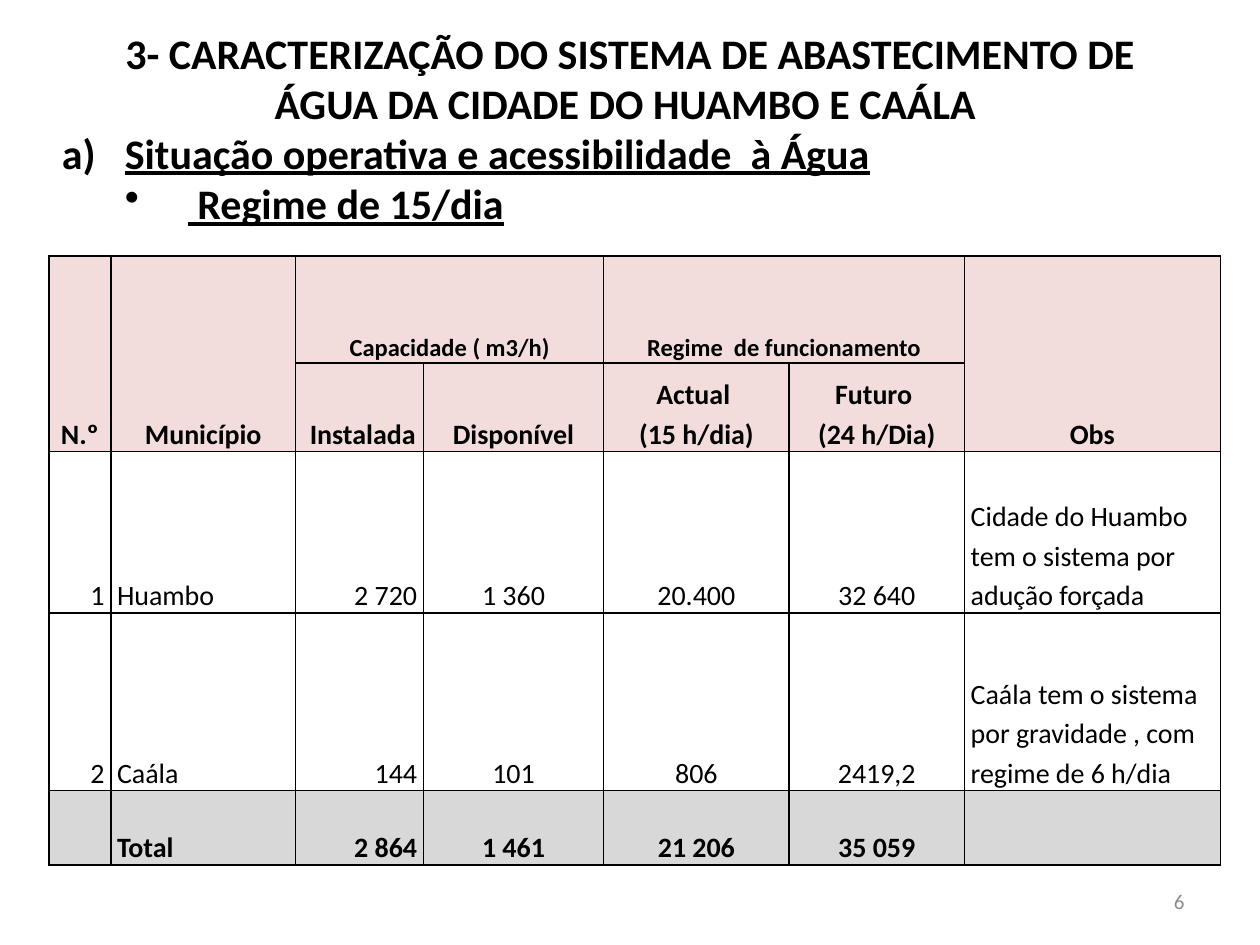
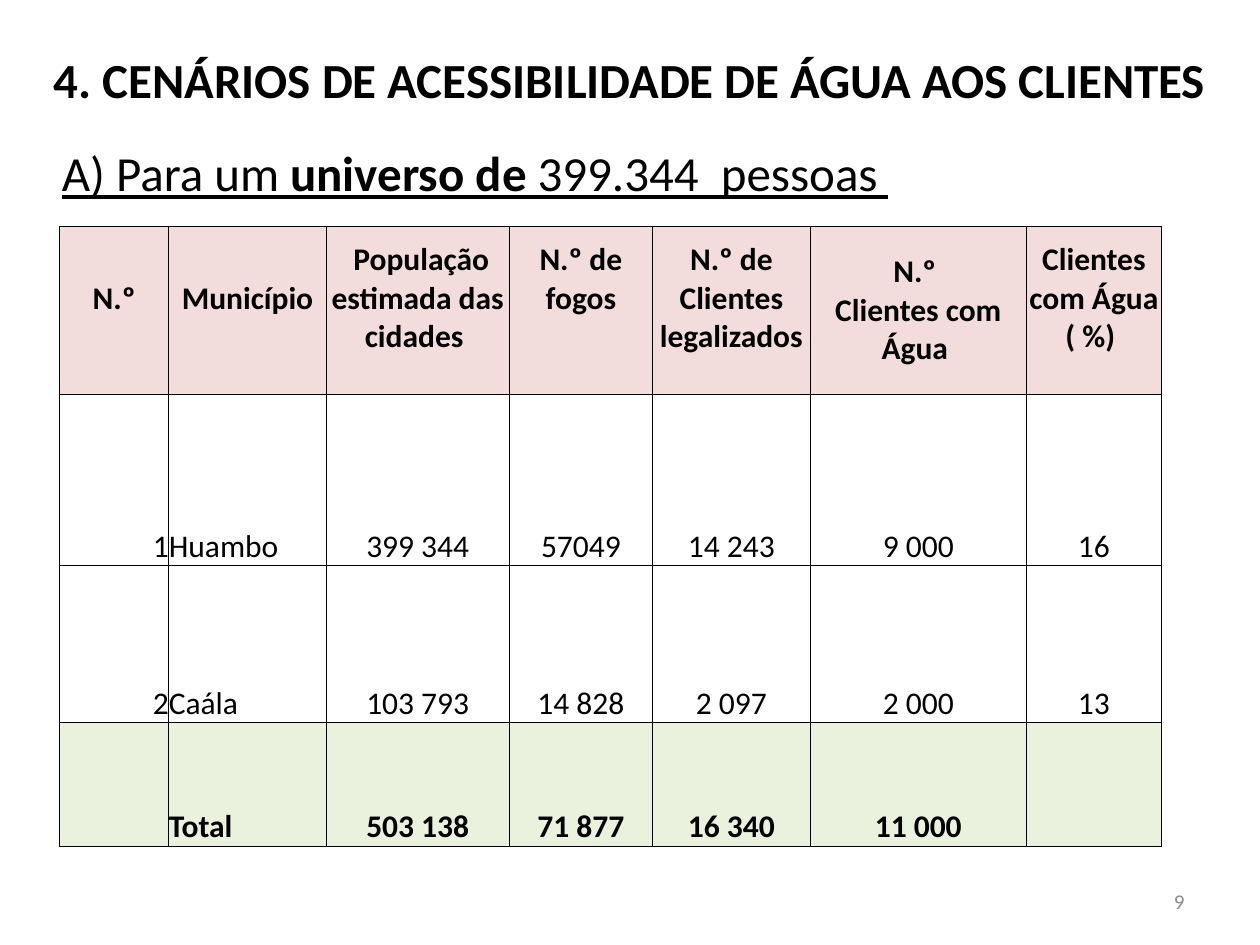
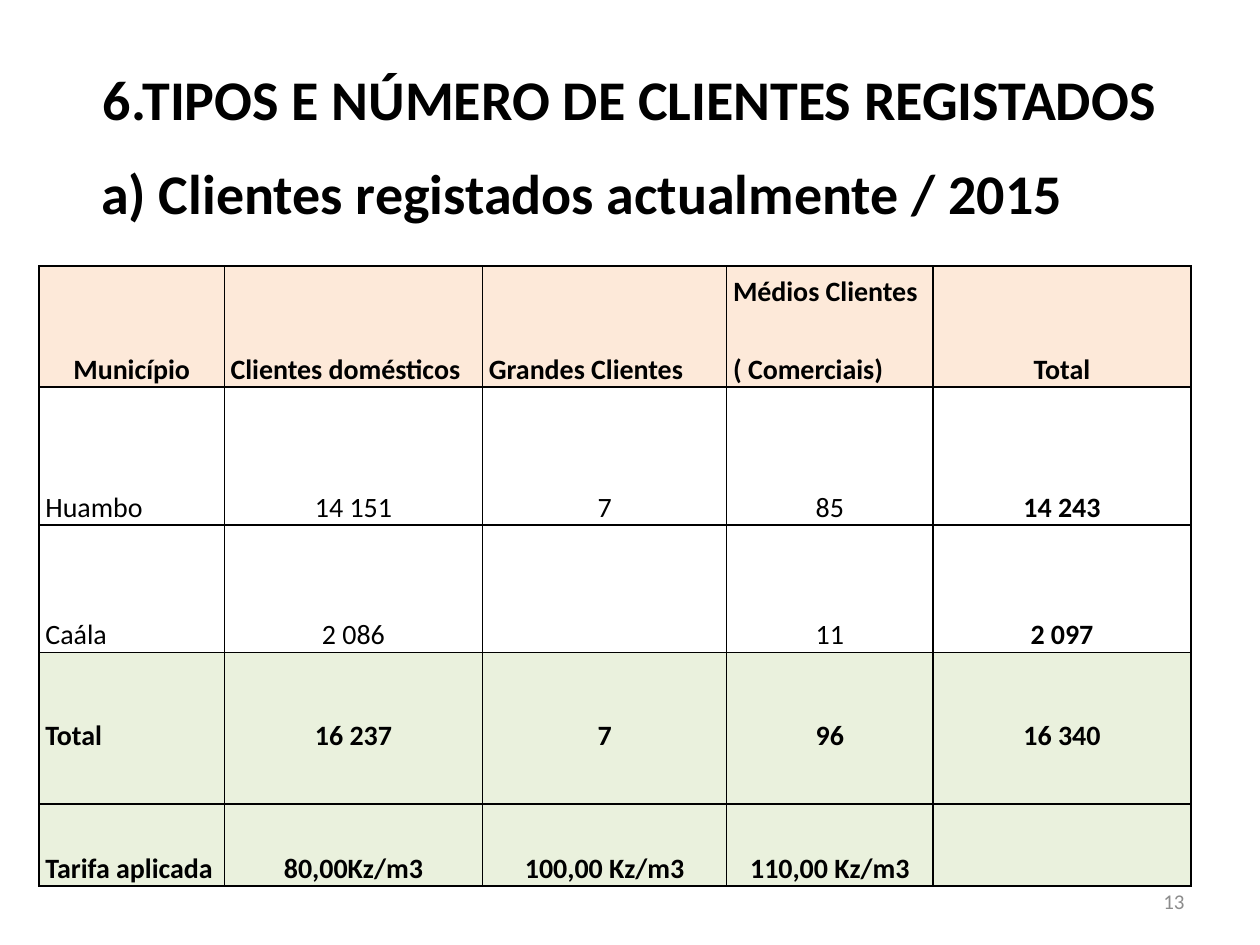
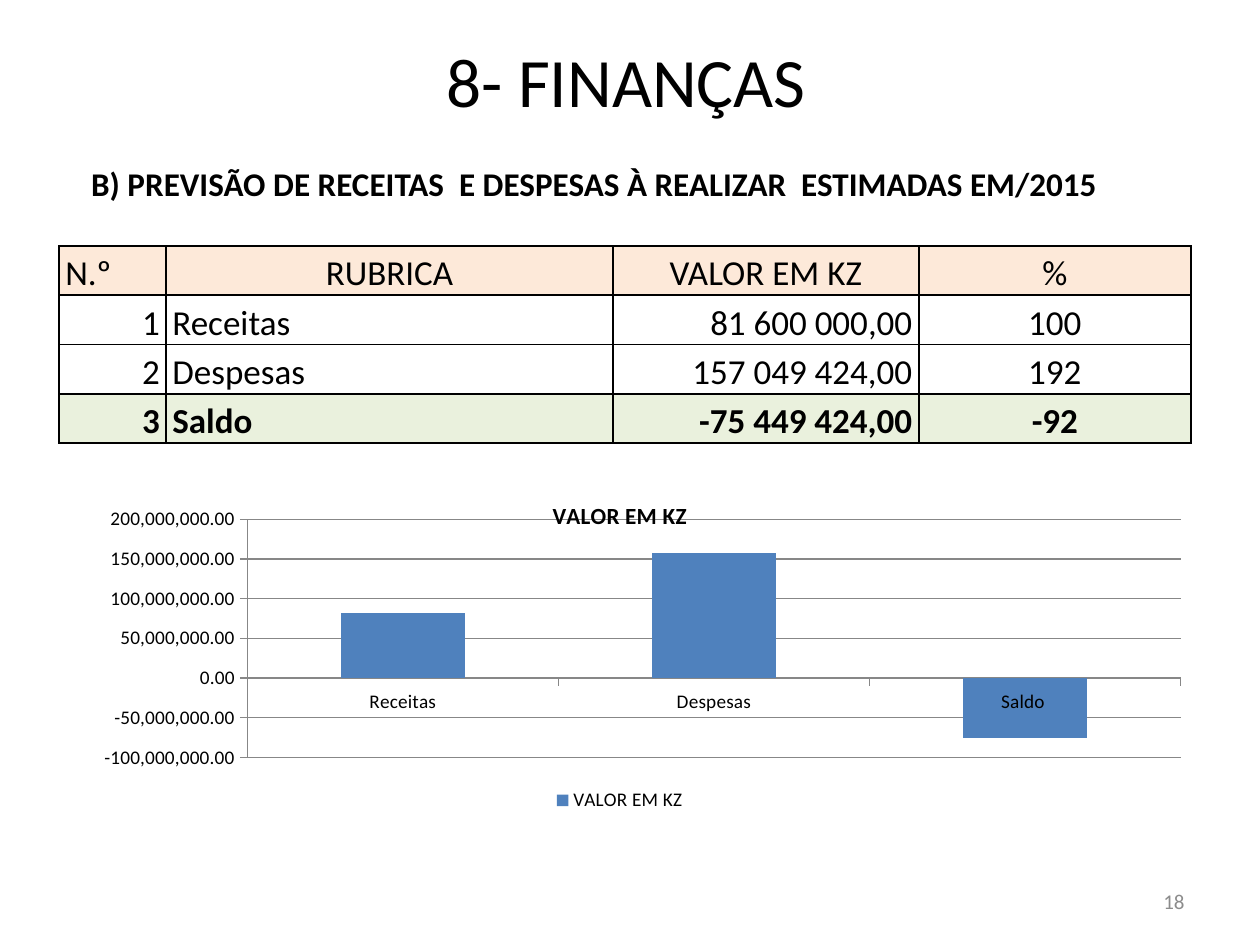
from dataclasses import dataclass

from pptx import Presentation
from pptx.chart.data import CategoryChartData as ChartData
from pptx.dml.color import RGBColor as RGB
from pptx.enum.chart import XL_CHART_TYPE as Kind, XL_LEGEND_POSITION as Spot
from pptx.enum.chart import XL_TICK_MARK as Tick
from pptx.enum.text import MSO_ANCHOR as Anchor, PP_ALIGN as Align
from pptx.oxml import parse_xml
from pptx.oxml.ns import nsdecls
from pptx.util import Pt


@dataclass(frozen=True)
class Theme:
    font: str = "Calibri"
    ink: str = "000000"
    pale: str = "8C8C8C"
    white: str = "FFFFFF"
    rose: str = "F2DDDC"
    peach: str = "FDE9D9"
    green: str = "EAF1DD"
    grey: str = "D8D8D8"
    bar: str = "4F81BD"
    rule: str = "878787"
    head: float = 24
    large: float = 28
    huge: float = 32
    top: float = 39.6
    sub: float = 18.9
    page: float = 12
    small: float = 14
    cell: float = 16
    wide: float = 18
    cash: float = 20
    axis: float = 11
    name: float = 13.2


T = Theme()
ALIGN = {"l": Align.LEFT, "c": Align.CENTER, "r": Align.RIGHT}


@dataclass
class Row:
    """A table row; align has one letter per column, a capital one means bold."""
    tall: float
    texts: list
    align: str
    fill: str = T.white
    sides: str = "LRTB"


def style(font, size, color=T.ink, **form):
    for key, val in {"name": T.font, "size": Pt(size), **form}.items():
        setattr(font, key, val)
    font.color.rgb = RGB.from_string(color)


def write(par, text, size, **form):
    run = par.add_run()
    run.text = text
    style(run.font, size, **form)


def text_box(slide, box, align="l", low=3.6):
    """Add an empty text box and return its frame; low is the bottom inset."""
    frame = slide.shapes.add_textbox(*map(Pt, box)).text_frame
    form = {"word_wrap": True, "vertical_anchor": Anchor.MIDDLE,
            "margin_bottom": Pt(low)}
    for key, val in form.items():
        setattr(frame, key, val)
    frame.paragraphs[0].alignment = ALIGN[align]
    return frame


def label(slide, box, text, size, align="l", low=3.6, **form):
    par = text_box(slide, box, align, low).paragraphs[0]
    write(par, text, size, **form)
    return par


def bullet(par, left, mark):
    """Give a paragraph a hanging indent of half an inch and a mark."""
    props = par._p.get_or_add_pPr()
    props.set("marL", str(Pt(left)))
    props.set("indent", str(-Pt(36)))
    props.append(parse_xml(f"<a:{mark} {nsdecls('a')}/>"))


def edge(cell, sides, width):
    props = cell._tc.get_or_add_tcPr()
    solid = f'<a:solidFill><a:srgbClr val="{T.ink}"/></a:solidFill>'
    for side in "LRTB":
        paint = solid if side in sides else "<a:noFill/>"
        props.append(parse_xml(
            f'<a:ln{side} {nsdecls("a")} w="{Pt(width)}">{paint}</a:ln{side}>'))


def fill_cell(cell, text, code, size, lead):
    for i, line in enumerate(text.split("\n") if text else []):
        frame = cell.text_frame
        par = frame.add_paragraph() if i else frame.paragraphs[0]
        par.alignment = ALIGN[code.lower()]
        par.line_spacing = lead
        write(par, line, size, bold=code.isupper())


def grid(slide, left, top, cols, rows, size, line=1, lead=1.15, inset=3.6):
    tall = sum(row.tall for row in rows)
    table = slide.shapes.add_table(len(rows), len(cols), Pt(left), Pt(top),
                                   Pt(sum(cols)), Pt(tall)).table
    table.first_row = table.horz_banding = False
    for col, width in zip(table.columns, cols):
        col.width = Pt(width)
    form = {"margin_left": Pt(inset), "margin_right": Pt(inset),
            "margin_top": 0, "margin_bottom": 0,
            "vertical_anchor": Anchor.BOTTOM}
    for r, row in enumerate(rows):
        table.rows[r].height = Pt(row.tall)
        for c, text in enumerate(row.texts):
            cell = table.cell(r, c)
            for key, val in form.items():
                setattr(cell, key, val)
            edge(cell, row.sides, line)
            cell.fill.solid()
            cell.fill.fore_color.rgb = RGB.from_string(row.fill)
            fill_cell(cell, text, row.align[c], size, lead)
    return table


def place_plot(chart, x, y, w, h):
    """Fix the inner plot area, in shares of the chart."""
    area = chart.element.xpath("c:chart/c:plotArea")[0]
    for old in area.xpath("c:layout"):
        area.remove(old)
    spots = "".join(f'<c:{key} val="{val}"/>' for key, val in
                    {"xMode": "edge", "yMode": "edge",
                     "x": x, "y": y, "w": w, "h": h}.items())
    area.insert(0, parse_xml(
        f'<c:layout {nsdecls("c")}><c:manualLayout><c:layoutTarget val="inner"/>'
        f"{spots}</c:manualLayout></c:layout>"))


def bar_chart(slide, box, name, cats, vals):
    data = ChartData(number_format="#,##0.00")
    data.categories = cats
    data.add_series(name, vals)
    chart = slide.shapes.add_chart(Kind.COLUMN_CLUSTERED, *map(Pt, box), data).chart
    style(chart.font, T.axis)
    chart.has_title = True
    write(chart.chart_title.text_frame.paragraphs[0], name, T.name, bold=True)
    chart.has_legend = True
    chart.legend.position = Spot.BOTTOM
    chart.legend.include_in_layout = False
    plot = chart.plots[0]
    plot.gap_width = 150
    plot.vary_by_categories = False
    paint = plot.series[0].format.fill
    paint.solid()
    paint.fore_color.rgb = RGB.from_string(T.bar)
    plot.series[0].invert_if_negative = False
    axis = chart.value_axis
    form = {"minimum_scale": -100000000, "maximum_scale": 200000000,
            "major_unit": 50000000, "has_major_gridlines": True}
    for key, val in form.items():
        setattr(axis, key, val)
    axis.tick_labels.number_format = "#,##0.00"
    axis.tick_labels.number_format_is_linked = False
    for part in (axis, chart.category_axis):
        part.major_tick_mark = Tick.OUTSIDE
    for part in (axis, chart.category_axis, axis.major_gridlines):
        part.format.line.color.rgb = RGB.from_string(T.rule)
        part.format.line.width = Pt(0.75)
    place_plot(chart, 0.168, 0.111, 0.832, 0.711)


def new_slide(deck, page):
    slide = deck.slides.add_slide(deck.slide_layouts[6])
    label(slide, (516, 500.5, 168, 28.5), str(page), T.page, "r", color=T.pale)
    return slide


def supply(deck):
    slide = new_slide(deck, 6)
    label(slide, (36, 21.5, 648, 46),
          "3- CARACTERIZAÇÃO DO SISTEMA DE ABASTECIMENTO DE "
          "ÁGUA DA CIDADE DO HUAMBO E CAÁLA ", T.head, "c", bold=True)
    par = label(slide, (28.3, 79, 648, 45),
                "Situação operativa e acessibilidade  à Água",
                T.head, bold=True, underline=True)
    bullet(par, 36, 'buAutoNum type="alphaLcParenR"')
    par = par._parent.add_paragraph()
    write(par, " Regime de 15/dia", T.head, bold=True, underline=True)
    bullet(par, 72, 'buChar char="•"')
    rows = [
        Row(61.2, ["N.º", "Município", "", "", "", "", "Obs"], "CCCCCCC", T.rose),
        Row(50.7, ["", "", " Instalada", "Disponível", "Actual \n(15 h/dia)",
                   "Futuro \n(24 h/Dia)", ""], "CCCCCCC", T.rose),
        Row(92.2, ["1", "Huambo", "2 720", "1 360", "20.400", "32 640",
                   "Cidade do Huambo tem o sistema por adução forçada"], "rlrcccl"),
        Row(101.5, ["2", "Caála", "144", "101", "806", "2419,2",
                    "Caála tem o sistema por gravidade , com regime de 6 h/dia"],
            "rlrcccl"),
        Row(42.5, ["", "Total", "2 864", "1 461", "21 206", "35 059", ""],
            "RLRCCCL", T.grey),
    ]
    table = grid(slide, 28, 146.2, [35.3, 105.7, 73, 103, 106, 100.2, 146.2],
                 rows, T.cell)
    for c in (0, 1, 6):
        table.cell(0, c).merge(table.cell(1, c))
    for c, text in {2: "Capacidade ( m3/h)", 4: "Regime  de funcionamento"}.items():
        table.cell(0, c).merge(table.cell(0, c + 1))
        fill_cell(table.cell(0, c), text, "C", T.small, 1.15)


def access(deck):
    slide = new_slide(deck, 9)
    label(slide, (22.5, 34, 680.5, 56),
          "4. CENÁRIOS DE ACESSIBILIDADE DE ÁGUA AOS CLIENTES ",
          T.large, "c", low=37.5, bold=True)
    par = text_box(slide, (28.3, 67.5, 648, 62)).paragraphs[0]
    for text, bold in (("A) Para um ", False), ("universo de ", True),
                       ("399.344  pessoas ", False)):
        write(par, text, T.large, bold=bold, underline=True)
    rows = [
        Row(96, ["N.º", "Município", " População estimada das cidades ",
                 "N.º de fogos", "N.º de Clientes legalizados",
                 "N.º \nClientes com Água ", "Clientes com Água ( %) "],
            "CCCCCCC", T.rose),
        Row(97.7, ["1", "Huambo", "399 344", "57049", "14 243", "9 000", "16"],
            "rlccccc"),
        Row(89.8, ["2", "Caála", "103 793", "14 828", "2 097", "2 000", "13"],
            "rlccccc"),
        Row(70.5, ["", "Total", "503 138", "71 877", "16 340", "11 000", ""],
            "RLCCCCC", T.green),
    ]
    table = grid(slide, 34, 129.5, [62.5, 90, 104.5, 82, 90, 123.7, 77], rows,
                 T.wide, line=0.5, lead=1, inset=0)
    for c, lines in enumerate((2, 2, 1, 2, 1, 0, 1)):
        table.cell(0, c).margin_bottom = Pt(22 * lines)
    table.cell(0, 5).vertical_anchor = Anchor.MIDDLE


def clients(deck):
    slide = new_slide(deck, 13)
    label(slide, (36, 21.8, 648, 68.5), "6.TIPOS E NÚMERO DE CLIENTES REGISTADOS",
          T.huge, "c", bold=True)
    label(slide, (50.8, 84.3, 648, 50.5), "a) Clientes registados actualmente / 2015",
          T.huge, bold=True)
    rows = [
        Row(69.2, ["Município", "Clientes domésticos", "Grandes Clientes",
                   "Médios Clientes\n( Comerciais)", "Total"], "CLLLC", T.peach),
        Row(78.9, ["Huambo", "14 151", "7", "85", "14 243"], "lcccC"),
        Row(72.7, ["Caála", "2 086", "", "11\u00a0".strip(), "2 097"], "lcccC"),
        Row(57.3, ["Total", "16 237", "7", "96", "16 340"], "LCCCC", T.green, "LRT"),
        Row(29.5, [""] * 5, "LCCCC", T.green, "LRB"),
        Row(46.8, ["Tarifa aplicada", "80,00Kz/m3", "100,00 Kz/m3",
                   "110,00 Kz/m3", ""], "LCCCC", T.green),
    ]
    table = grid(slide, 22.4, 152, [105.8, 147.6, 139.5, 117.9, 147.4], rows, T.cell)
    table.cell(0, 3).text_frame.paragraphs[1].space_before = Pt(22.4)


def finance(deck):
    slide = new_slide(deck, 18)
    label(slide, (33.8, 16.8, 648, 57), "8- FINANÇAS", T.top, "c")
    rows = [
        Row(28.2, ["N.º", "RUBRICA", "VALOR EM KZ", "%"], "lccc", T.peach),
        Row(28.2, ["1", "Receitas", "81 600 000,00", "100"], "rlrc"),
        Row(28.2, ["2", "Despesas", "157 049 424,00", "192"], "rlrc"),
        Row(28.2, ["3", "Saldo", "-75 449 424,00", "-92"], "RLRC", T.green),
    ]
    grid(slide, 33.7, 140.5, [61.2, 255.4, 174.8, 155.5], rows, T.cash)
    par = label(slide, (45, 84, 648, 45.5),
                "B) PREVISÃO DE RECEITAS  E DESPESAS À REALIZAR  ESTIMADAS EM/2015",
                T.sub, bold=True)
    par.line_spacing = 0.8
    bar_chart(slide, (33.6, 275.5, 641.5, 191.5), "VALOR EM KZ",
              ["Receitas", "Despesas", "Saldo "], [82000000, 157000000, -75000000])


def main():
    deck = Presentation()
    deck.slide_width, deck.slide_height = Pt(720), Pt(540)
    for build in (supply, access, clients, finance):
        build(deck)
    deck.save("out.pptx")


if __name__ == "__main__":
    main()
